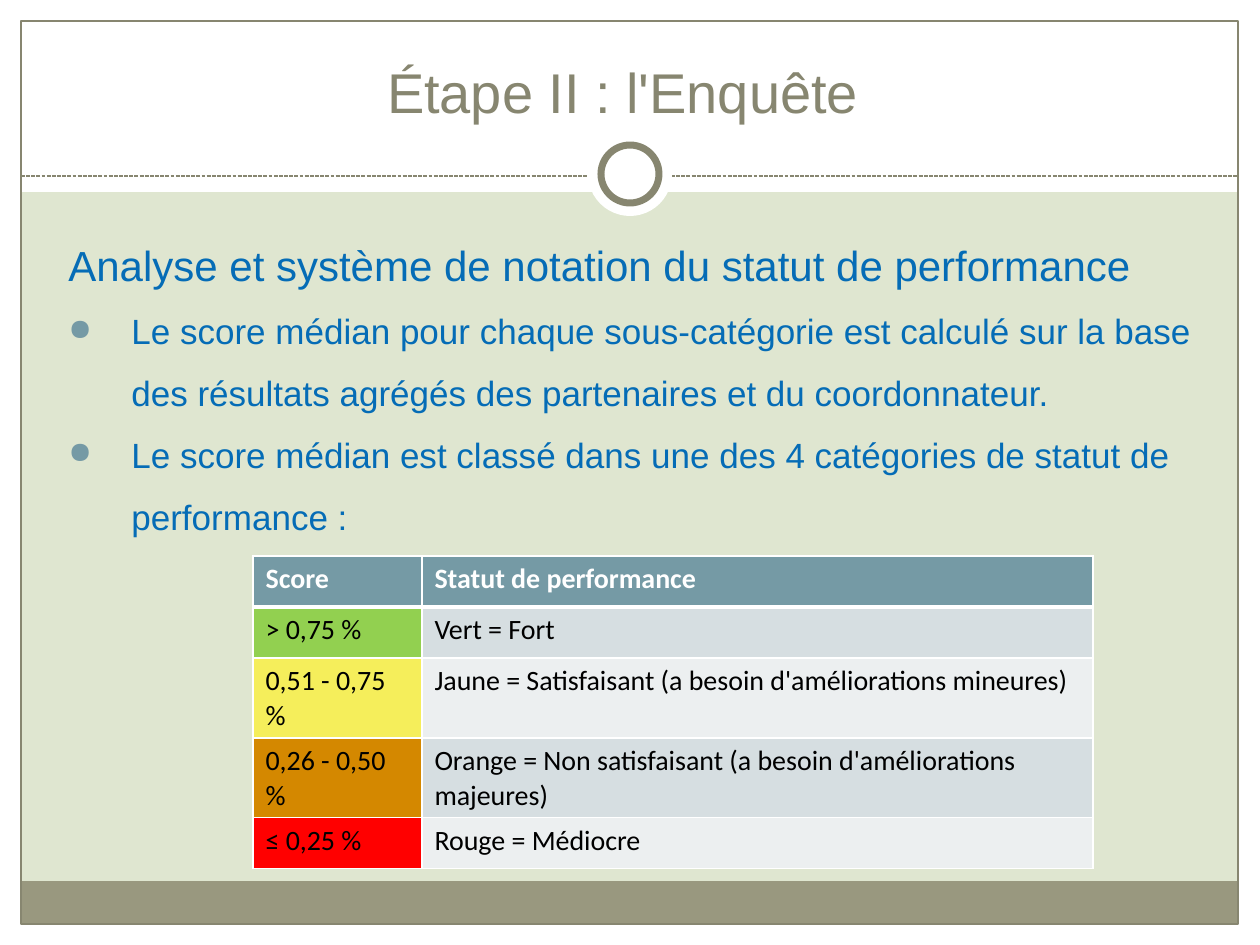
from lxml import etree
from pptx import Presentation
from pptx.dml.color import RGBColor
from pptx.enum import dml, shapes, text
from pptx.oxml import ns
from pptx.util import Pt

PX = 914400 / 126
WHITE, OLIVE, BAND, SAGE = "FFFFFF", "878670", "99987F", "DFE6D0"
BLUE, TEAL, BLACK = "056CB6", "759AA5", "000000"
ROW_FILLS = "D6DEE1", "ECEFF0"


def px(n):
    return round(n * PX)


def rgb(code):
    return RGBColor.from_string(code)


def add_xml(parent, tag, **attrs):
    return etree.SubElement(parent, ns.qn(tag), attrs)


class Deck:
    """Style and current slide, with one method per kind of element."""

    head_font, table_font = "Arial", "Calibri"

    def __init__(self, width, height, bg):
        self.prs = Presentation()
        self.prs.slide_width, self.prs.slide_height = px(width), px(height)
        self.slide = self.prs.slides.add_slide(self.prs.slide_layouts[6])
        self.slide.background.fill.solid()
        self.slide.background.fill.fore_color.rgb = rgb(bg)

    def shape(self, kind, box, fill=None, line=None, weight=0.75):
        sp = self.slide.shapes.add_shape(kind, *map(px, box))
        sp.shadow.inherit = False
        if fill:
            sp.fill.solid()
            sp.fill.fore_color.rgb = rgb(fill)
        else:
            sp.fill.background()
        if line:
            sp.line.color.rgb = rgb(line)
            sp.line.width = Pt(weight)
        else:
            sp.line.fill.background()

    def dashed_line(self, x1, y1, x2, y2, color):
        cx = self.slide.shapes.add_connector(
            shapes.MSO_CONNECTOR.STRAIGHT, *map(px, (x1, y1, x2, y2)))
        cx.line.color.rgb = rgb(color)
        cx.line.width = Pt(0.75)
        cx.line.dash_style = dml.MSO_LINE.SQUARE_DOT
        add_xml(cx.line._ln.getparent(), "a:effectLst")

    def textbox(self, box, anchor):
        tf = self.slide.shapes.add_textbox(*map(px, box)).text_frame
        tf.word_wrap = True
        tf.vertical_anchor = anchor
        return tf

    def run(self, p, words, size, color, font, bold=False):
        r = p.add_run()
        r.text = words
        r.font.size, r.font.name, r.font.bold = Pt(size), font, bold
        r.font.color.rgb = rgb(color)

    def title(self, box, words):
        p = self.textbox(box, text.MSO_ANCHOR.BOTTOM).paragraphs[0]
        p.alignment = text.PP_ALIGN.CENTER
        self.run(p, words, 32, OLIVE, self.head_font)

    def body(self, box, heading, bullets):
        tf = self.textbox(box, text.MSO_ANCHOR.TOP)
        for i, words in enumerate([heading, *bullets]):
            p = tf.add_paragraph() if i else tf.paragraphs[0]
            p.line_spacing = 1.47
            self.run(p, words, 20 if i else 24, BLUE, self.head_font)
            pPr = p._p.get_or_add_pPr()
            pPr.set("marL", str(px(77 if i else 14)))
            pPr.set("indent", str(px(-63 if i else 0)))
            if i:
                add_xml(add_xml(pPr, "a:buClr"), "a:srgbClr", val=TEAL)
                add_xml(pPr, "a:buSzPct", val="85000")
                add_xml(pPr, "a:buChar", char="●")

    def border(self, cell, side, weight):
        ln = add_xml(cell._tc.get_or_add_tcPr(), f"a:{side}", w=str(Pt(weight)))
        add_xml(add_xml(ln, "a:solidFill"), "a:srgbClr", val=WHITE)

    def cell(self, cell, words, fill, color, header, below_header):
        for side in ("lnL", "lnR", "lnT", "lnB"):
            thick = (header and side == "lnB") or (below_header and side == "lnT")
            self.border(cell, side, 3 if thick else 1)
        cell.fill.solid()
        cell.fill.fore_color.rgb = rgb(fill)
        self.run(cell.text_frame.paragraphs[0], words, 16, color,
                 self.table_font, header)

    def table(self, left, top, widths, row_height, header, rows):
        n = len(rows) + 1
        tbl = self.slide.shapes.add_table(
            n, len(widths), px(left), px(top),
            px(sum(widths)), px(row_height * n)).table
        tbl.horz_banding = False
        for col, w in zip(tbl.columns, widths):
            col.width = px(w)
        for c, words in enumerate(header):
            self.cell(tbl.cell(0, c), words, TEAL, WHITE, True, False)
        for i, (score, status, color) in enumerate(rows):
            pairs = (score, color), (status, ROW_FILLS[i % 2])
            for c, (words, fill) in enumerate(pairs):
                self.cell(tbl.cell(i + 1, c), words, fill, BLACK, False, i == 0)


def main():
    deck = Deck(1260, 945, SAGE)
    rect, oval = shapes.MSO_SHAPE.RECTANGLE, shapes.MSO_SHAPE.OVAL

    # White margins, footer band and frame
    for box in ((0, 924, 1260, 21), (0, 0, 1260, 192),
                (0, 0, 21, 945), (1239, 0, 21, 945)):
        deck.shape(rect, box, WHITE)
    deck.shape(rect, (21, 881, 1217, 43), BAND)
    deck.shape(rect, (21, 21, 1217, 903), line=OLIVE)

    # Divider with ring
    deck.dashed_line(21, 176, 1239, 176, OLIVE)
    deck.shape(oval, (588, 132, 84, 84), WHITE)
    deck.shape(oval, (601, 145, 58, 58), WHITE, OLIVE, 4)

    # Title and body text
    deck.title((35, 26, 1176, 105), "Étape II : l'Enquête")
    deck.body(
        (42, 210, 1172, 630),
        "Analyse et système de notation du statut de performance",
        ["Le score médian pour chaque sous-catégorie est calculé sur la base "
         "des résultats agrégés des partenaires et du coordonnateur. ",
         "Le score médian est classé dans une des 4 catégories de statut de "
         "performance :"])

    # Score table
    deck.table(253, 556, (169, 671), 51, ("Score", "Statut de performance"), [
        ("> 0,75 %", "Vert = Fort", "92D050"),
        ("0,51 - 0,75 %",
         "Jaune = Satisfaisant (a besoin d'améliorations mineures)", "F5EE5B"),
        ("0,26 - 0,50 %",
         "Orange = Non satisfaisant (a besoin d'améliorations majeures)",
         "D48800"),
        ("≤ 0,25 %", "Rouge = Médiocre", "FF0000")])

    deck.prs.save("out.pptx")


if __name__ == "__main__":
    main()
